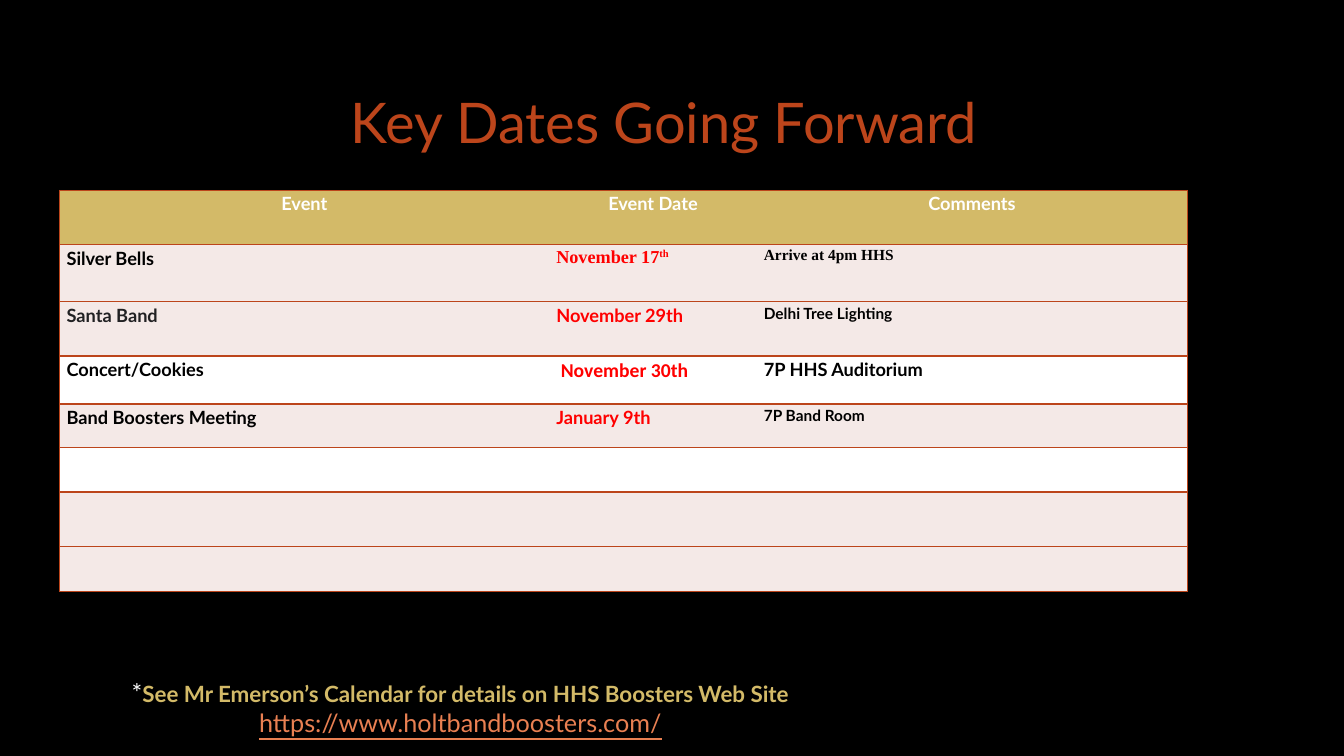
from lxml import etree
from pptx import Presentation, util as u
from pptx.dml.color import RGBColor
from pptx.enum import text
from pptx.oxml import parse_xml
from pptx.oxml.ns import nsdecls

COLORS = {"back": "000000", "rust": "BC451B", "gold": "D3BA68", "pink": "F4E9E7",
          "white": "FFFFFF", "black": "000000", "ink": "212123", "red": "FF0000",
          "link": "E98052", "outline": "404040"}


def add_span(para, words, color, **formats):
    span = para.add_run()
    span.text = words
    span.font.color.rgb = RGBColor.from_string(COLORS[color])
    for name, value in ({"name": "Lato"} | formats).items():
        setattr(span.font, name, value)
    return span


def add_border(cell, side, shown):
    """Draw one side of a cell in rust, or switch that side off."""
    fill = (f'<a:solidFill><a:srgbClr val="{COLORS["rust"]}"/></a:solidFill>'
            if shown else "<a:noFill/>")
    cell._tc.get_or_add_tcPr().append(parse_xml(
        f'<a:ln{side} {nsdecls("a")} w="12700">{fill}</a:ln{side}>'))


deck = Presentation()
deck.slide_width, deck.slide_height = u.Cm(33.87), u.Cm(19.05)
page = deck.slides.add_slide(deck.slide_layouts[5])
page.background.fill.solid()
page.background.fill.fore_color.rgb = RGBColor.from_string(COLORS["back"])

# Title
title = page.shapes.title
title.left, title.top, title.width, title.height = u.Cm(2.54), u.Cm(1.7), u.Cm(28.75), u.Cm(2.69)
title.text_frame.vertical_anchor = text.MSO_ANCHOR.MIDDLE
para = title.text_frame.paragraphs[0]
para.alignment = text.PP_ALIGN.CENTER
span = add_span(para, "Key Dates Going Forward ", "rust", size=u.Pt(40))
span.font._element.insert(0, parse_xml(
    f'<a:ln {nsdecls("a")} w="9525"><a:solidFill><a:srgbClr val="{COLORS["outline"]}">'
    '<a:alpha val="10000"/></a:srgbClr></a:solidFill><a:prstDash val="solid"/></a:ln>'))

# Footnote
box = page.shapes.add_textbox(u.Cm(3.07), u.Cm(16.94), u.Cm(17.4), u.Cm(1.8))
frame = box.text_frame
frame.word_wrap = False
frame.auto_size = text.MSO_AUTO_SIZE.SHAPE_TO_FIT_TEXT
note = frame.paragraphs[0]
add_span(note, "*", "white", size=u.Pt(18))
add_span(note, "See Mr Emerson’s Calendar for details on HHS Boosters Web Site", "gold",
         size=u.Pt(16), bold=True)
address = frame.add_paragraph()
address.alignment = text.PP_ALIGN.CENTER
add_span(address, "https://www.holtbandboosters.com/", "link", size=u.Pt(18), underline=True)

# Dates table: each cell is a list of (words, color, size, font)
SERIF = "Times New Roman"
events = [
    ("gold", [[("Event", "white", 13, "Lato")], [("Event Date", "white", 13, "Lato")],
              [("Comments", "white", 13, "Lato")]]),
    ("pink", [[("Silver Bells", "black", 13, "Lato")],
              [("November 17", "red", 13, SERIF), ("th", "red", 13, SERIF)],
              [("Arrive at 4pm HHS", "black", 11, SERIF)]]),
    ("pink", [[("Santa Band", "ink", 13, "Lato")], [("November 29th", "red", 13, "Lato")],
              [("Delhi Tree Lighting", "black", 11, "Lato")]]),
    ("white", [[("Concert/Cookies", "black", 13, "Lato")],
               [(" ", "white", 14, "Calibri"), ("November 30th", "red", 14, "Calibri")],
               [("7P HHS Auditorium", "black", 13, "Lato")]]),
    ("pink", [[("Band Boosters Meeting", "black", 13, "Lato")],
              [("January 9th", "red", 13, "Lato")],
              [("7P Band Room", "black", 11, "Lato")]]),
    ("white", [[], [], []]),
    ("pink", [[], [], []]),
    ("pink", [[], [], []]),
]
widths = [12.34, 5.23, 10.85]
heights = [1.37, 1.43, 1.37, 1.21, 1.1, 1.12, 1.37, 1.13]
table = page.shapes.add_table(len(heights), len(widths), u.Cm(1.5), u.Cm(4.8),
                              u.Cm(sum(widths)), u.Cm(sum(heights))).table
for column, width in zip(table.columns, widths):
    column.width = u.Cm(width)

margins = {"margin_left": u.Cm(0.18), "margin_right": u.Cm(0.18),
           "margin_top": u.Cm(0.03), "margin_bottom": u.Cm(0)}
for row, (fill, contents) in enumerate(events):
    table.rows[row].height = u.Cm(heights[row])
    for col, spans in enumerate(contents):
        cell = table.cell(row, col)
        for name, value in margins.items():
            setattr(cell, name, value)
        for side, shown in {"L": col == 0, "R": col == 2, "T": True, "B": True}.items():
            add_border(cell, side, shown)
        cell.fill.solid()
        cell.fill.fore_color.rgb = RGBColor.from_string(COLORS[fill])
        para = cell.text_frame.paragraphs[0]
        para.line_spacing = 1.06
        if row == 0:
            para.alignment = text.PP_ALIGN.CENTER
        for words, color, size, font in spans:
            span = add_span(para, words, color, size=u.Pt(size), name=font, bold=True)
            if words == "th":
                span.font._element.set("baseline", "30000")

deck.save("out.pptx")
